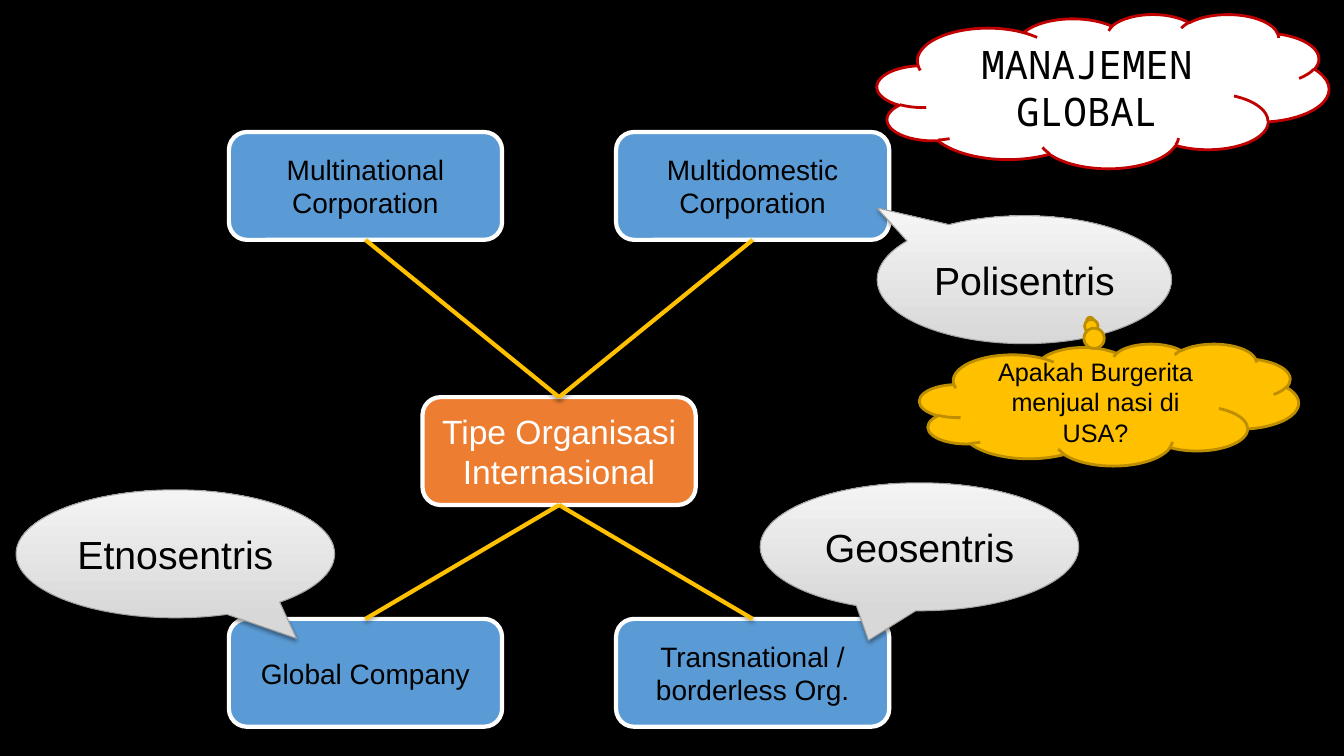
from dataclasses import dataclass

from lxml import etree
from pptx import Presentation
from pptx.dml.color import RGBColor
from pptx.enum.shapes import MSO_CONNECTOR as Connector, MSO_SHAPE as Shape
from pptx.enum.text import MSO_ANCHOR as Anchor, PP_ALIGN as Align
from pptx.oxml.ns import qn
from pptx.util import Pt

PX = 9144  # 100 px to the inch
TOP, BOTTOM = 0, 2  # connection sites of a rounded rectangle


@dataclass(frozen=True)
class Theme:
    black: str = "000000"
    white: str = "FFFFFF"
    red: str = "C00000"
    orange: str = "ED7D31"
    blue: str = "5B9BD5"
    gold: str = "FFC000"
    dark_gold: str = "BD8E00"
    grey_line: str = "A1A1A1"
    grey_low: str = "D8D8D8"
    grey_high: str = "F4F4F4"
    font: str = "Arial"
    mono: str = "Noto Sans Mono"
    title: int = 28
    center: int = 24
    type_name: int = 20
    question: int = 18


THEME = Theme()


def rgb(color):
    return RGBColor.from_string(color)


def write_text(shape, text, size, color=THEME.black, font=THEME.font):
    frame = shape.text_frame
    frame.word_wrap = True
    frame.vertical_anchor = Anchor.MIDDLE
    para = frame.paragraphs[0]
    para.alignment = Align.CENTER
    span = para.add_run()
    span.text = text
    span.font.name = font
    span.font.size = Pt(size)
    span.font.color.rgb = rgb(color)


def set_effects(shape, shadow, opacity=38, distance=20000):
    """Replace the theme effects by a soft shadow below, or by none."""
    properties = shape._element.spPr
    for old in properties.findall(qn("a:effectLst")):
        properties.remove(old)
    effects = etree.SubElement(properties, qn("a:effectLst"))
    if shadow:
        outer = etree.SubElement(effects, qn("a:outerShdw"), blurRad="40000",
                                 dist=str(distance), dir="5400000", rotWithShape="0")
        color = etree.SubElement(outer, qn("a:srgbClr"), val=THEME.black)
        etree.SubElement(color, qn("a:alpha"), val=str(opacity * 1000))


def add_bubble(page, kind, box, fill, line, width, shadow=False, pointer=()):
    """Draw a filled, outlined shape; two fill colours make a vertical gradient."""
    shape = page.shapes.add_shape(kind, *(length * PX for length in box))
    for index, value in enumerate(pointer):
        shape.adjustments[index] = value
    if isinstance(fill, tuple):
        shape.fill.gradient()
        shape.fill.gradient_angle = 90
        for stop, color in zip(shape.fill.gradient_stops, fill):
            stop.color.rgb = rgb(color)
    else:
        shape.fill.solid()
        shape.fill.fore_color.rgb = rgb(fill)
    shape.line.color.rgb = rgb(line)
    shape.line.width = Pt(width)
    set_effects(shape, shadow)
    return shape


def add_title(page, box):
    cloud = add_bubble(page, Shape.CLOUD, box, THEME.white, THEME.red, 2)
    write_text(cloud, "MANAJEMEN GLOBAL", THEME.title, font=THEME.mono)


def add_link(page, start, start_site, end, end_site):
    link = page.shapes.add_connector(Connector.STRAIGHT, 0, 0, 0, 0)
    link.begin_connect(start, start_site)
    link.end_connect(end, end_site)
    link.line.color.rgb = rgb(THEME.gold)
    link.line.width = Pt(3)
    set_effects(link, True, opacity=35, distance=23000)


def add_type_map(page, box):
    """Place the centre card and one linked card in each corner of the box."""
    left, top, width, height = box
    card_width, card_height = 271, 107
    right, low = left + width - card_width, top + height - card_height

    def add_card(x, y, fill):
        return add_bubble(page, Shape.ROUNDED_RECTANGLE, (x, y, card_width, card_height),
                          fill, THEME.white, 3, shadow=True)

    center = add_card((left + right) // 2, top + 263, THEME.orange)
    write_text(center, "Tipe Organisasi Internasional", THEME.center, THEME.white)
    corners = [
        ("Transnational / borderless Org.", right, low),
        ("Global Company", left, low),
        ("Multinational Corporation", left, top),
        ("Multidomestic Corporation", right, top),
    ]
    for name, x, y in corners:
        card = add_card(x, y, THEME.blue)
        write_text(card, name, THEME.type_name)
        if y == top:
            add_link(page, card, BOTTOM, center, TOP)
        else:
            add_link(page, center, BOTTOM, card, TOP)


def add_orientation(page, box, name, pointer):
    callout = add_bubble(page, Shape.OVAL_CALLOUT, box, (THEME.grey_low, THEME.grey_high),
                         THEME.grey_line, 0.75, shadow=True, pointer=pointer)
    write_text(callout, name, THEME.title)


def add_question(page, box):
    cloud = add_bubble(page, Shape.CLOUD_CALLOUT, box, THEME.gold, THEME.dark_gold, 2,
                       pointer=(-0.05, -0.69))
    write_text(cloud, "Apakah Burgerita menjual nasi di USA?", THEME.question)


def main():
    deck = Presentation()
    deck.slide_width, deck.slide_height = 1333 * PX, 750 * PX
    page = deck.slides.add_slide(deck.slide_layouts[6])
    page.background.fill.solid()
    page.background.fill.fore_color.rgb = rgb(THEME.black)

    # Title cloud and the map of organisation types
    add_title(page, (870, 14, 448, 153))
    add_type_map(page, (227, 131, 655, 590))

    # Orientations, with the question about the first
    add_orientation(page, (870, 214, 292, 127), "Polisentris", (-0.5, -0.56))
    add_question(page, (912, 341, 376, 121))
    add_orientation(page, (16, 486, 316, 127), "Etnosentris", (0.38, 0.66))
    add_orientation(page, (754, 479, 316, 127), "Geosentris", (-0.16, 0.73))

    deck.save("out.pptx")


if __name__ == "__main__":
    main()
